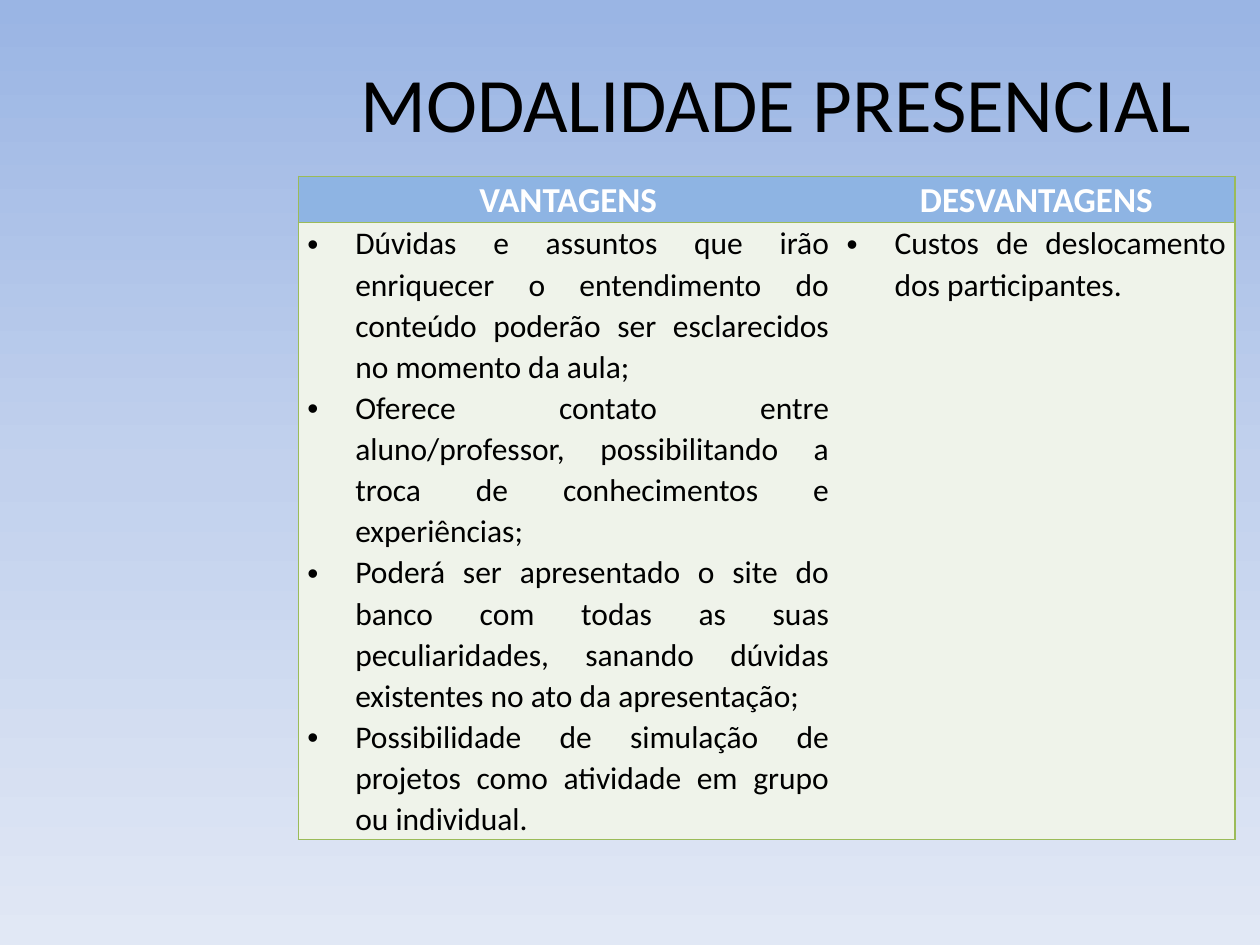
from dataclasses import dataclass

from pptx import Presentation
from pptx.dml.color import RGBColor as Color
from pptx.enum.text import MSO_ANCHOR as Anchor, PP_ALIGN as Align
from pptx.oxml.ns import qn
from pptx.oxml.xmlchemy import OxmlElement as Element
from pptx.util import Inches, Pt


@dataclass(frozen=True)
class Theme:
    font: str = "Calibri"
    title_size: int = 44
    header_size: int = 20
    body_size: int = 18
    text: str = "000000"
    header_text: str = "FFFFFF"
    header_fill: str = "8EB4E3"
    body_fill: str = "EFF3EA"
    border: str = "9BBB59"
    gradient: tuple = ((0, "9AB5E4"), (50, "C2D1ED"), (100, "E1E8F5"))
    line_spacing: float = 1.07
    indent: float = 0.38
    plain_table: str = "{2D5ABB26-0587-4C30-8999-92F81FD0307C}"


THEME = Theme()
COLUMNS = (
    (
        "VANTAGENS",
        4.28,
        (
            "Dúvidas e assuntos que irão enriquecer o entendimento do conteúdo poderão ser esclarecidos no momento da aula;",
            "Oferece contato entre aluno/professor, possibilitando a troca de conhecimentos e experiências;",
            "Poderá ser apresentado o site do banco com todas as suas peculiaridades, sanando dúvidas existentes no ato da apresentação;",
            "Possibilidade de simulação de projetos como atividade em grupo ou individual.",
        ),
    ),
    ("DESVANTAGENS", 3.15, ("Custos de deslocamento dos participantes.",)),
)
ROW_HEIGHTS = (0.35, 4.9)


def add_child(parent, tag, **attributes):
    child = Element(tag)
    for name, value in attributes.items():
        child.set(name, str(value))
    parent.append(child)
    return child


def paint_background(page):
    fill = page.background.fill
    fill.gradient()
    fill.gradient_angle = 270
    stops = next(page.element.iter(qn("a:gsLst")))
    stops.clear()
    for percent, color in THEME.gradient:
        stop = add_child(stops, "a:gs", pos=percent * 1000)
        add_child(stop, "a:srgbClr", val=color)


def style_font(para, size, color, bold=False):
    font = para.font
    font.name, font.size, font.bold = THEME.font, Pt(size), bold
    font.color.rgb = Color.from_string(color)


def add_title(page, text):
    title = page.shapes.title
    title.left, title.top = Inches(2.34), 0
    title.width, title.height = Inches(7.64), Inches(1.61)
    title.text_frame.text = text
    title.text_frame.vertical_anchor = Anchor.MIDDLE
    para = title.text_frame.paragraphs[0]
    para.alignment = Align.CENTER
    style_font(para, THEME.title_size, THEME.text)


def add_bullet(para):
    properties = para._p.get_or_add_pPr()
    indent = Inches(THEME.indent)
    properties.set("marL", str(indent))
    properties.set("indent", str(-indent))
    add_child(properties, "a:buFont", typeface="Arial")
    add_child(properties, "a:buChar", char="•")


def format_cell(cell, fill, sides):
    cell.margin_left = cell.margin_right = Inches(0.07)
    cell.margin_top = cell.margin_bottom = 0
    properties = cell._tc.get_or_add_tcPr()
    for side in sides:
        line = add_child(properties, f"a:ln{side}", w=Pt(1))
        add_child(add_child(line, "a:solidFill"), "a:srgbClr", val=THEME.border)
    cell.fill.solid()
    cell.fill.fore_color.rgb = Color.from_string(fill)


def fill_header(cell, text, edge):
    format_cell(cell, THEME.header_fill, edge + "TB")
    cell.text = text
    para = cell.text_frame.paragraphs[0]
    para.alignment, para.line_spacing = Align.CENTER, THEME.line_spacing
    style_font(para, THEME.header_size, THEME.header_text, bold=True)


def fill_list(cell, items, edge):
    format_cell(cell, THEME.body_fill, edge + "TB")
    cell.text = "\n".join(items)
    for para in cell.text_frame.paragraphs:
        para.alignment, para.line_spacing = Align.JUSTIFY, THEME.line_spacing
        add_bullet(para)
        style_font(para, THEME.body_size, THEME.text)


def add_comparison(page):
    width = sum(column[1] for column in COLUMNS)
    frame = page.shapes.add_table(
        len(ROW_HEIGHTS), len(COLUMNS),
        Inches(2.37), Inches(1.4), Inches(width), Inches(sum(ROW_HEIGHTS)),
    )
    table = frame.table
    table.horz_banding = False
    next(frame._element.iter(qn("a:tableStyleId"))).text = THEME.plain_table
    for row, height in zip(table.rows, ROW_HEIGHTS):
        row.height = Inches(height)
    for index, ((heading, column_width, items), edge) in enumerate(zip(COLUMNS, "LR")):
        table.columns[index].width = Inches(column_width)
        fill_header(table.cell(0, index), heading, edge)
        fill_list(table.cell(1, index), items, edge)


def main():
    deck = Presentation()
    deck.slide_width, deck.slide_height = Inches(10), Inches(7.5)
    page = deck.slides.add_slide(deck.slide_layouts[0])
    subtitle = page.placeholders[1].element
    subtitle.getparent().remove(subtitle)
    paint_background(page)
    add_title(page, "MODALIDADE PRESENCIAL")
    add_comparison(page)
    deck.save("out.pptx")


if __name__ == "__main__":
    main()
